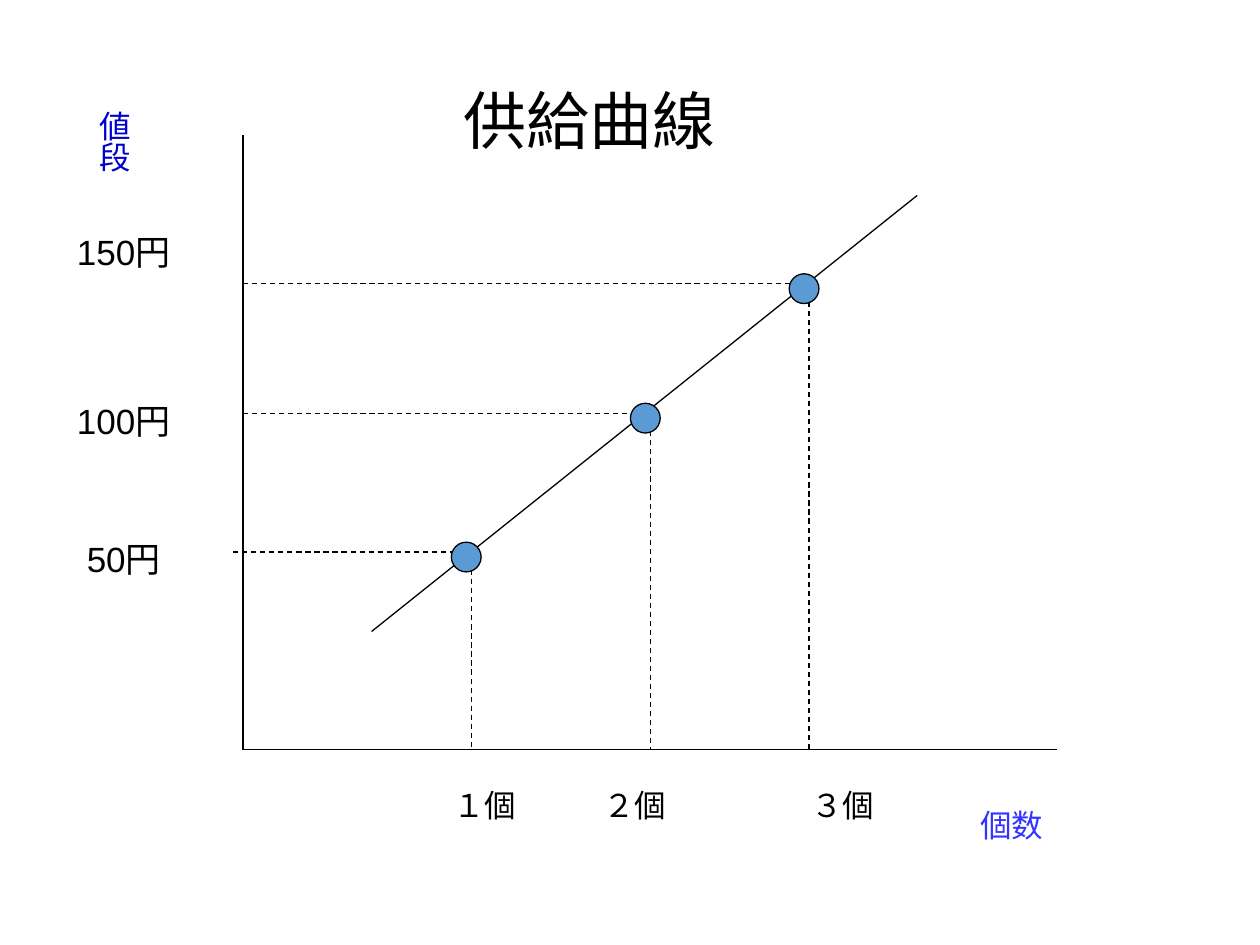
from typing import NamedTuple

from pptx import Presentation
from pptx.dml.color import RGBColor
from pptx.enum import dml, shapes, text
from pptx.oxml.ns import qn
from pptx.util import Cm, Pt

BLACK = RGBColor(0x00, 0x00, 0x00)
NAVY = RGBColor(0x00, 0x00, 0xCC)
BLUE = RGBColor(0x33, 0x33, 0xFF)
SKY = RGBColor(0x5B, 0x9B, 0xD5)

LEFT, RIGHT, TOP, BASE = 4.9, 21.31, 2.72, 15.11
DOT = 0.6
SHIFT = 0.1  # dots sit slightly left of and below the guide corners


class Label(NamedTuple):
    words: str
    left: float
    top: float
    width: float


class Point(NamedTuple):
    x: float
    y: float
    start: float
    price: Label
    count: Label


POINTS = [
    Point(9.5, 11.13, 4.7, Label("50円", 1.5, 10.72, 3.4),
          Label("１個", 8.89, 15.72, 2.59)),
    Point(13.11, 8.33, LEFT, Label("100円", 1.3, 7.92, 3),
          Label("２個", 11.91, 15.72, 3)),
    Point(16.31, 5.72, LEFT, Label("150円", 1.3, 4.52, 3),
          Label("３個", 16.1, 15.72, 2.59)),
]


def write(box, words: str, size: int = 18, color: RGBColor = BLACK,
          upright: bool = False) -> None:
    frame = box.text_frame
    frame.text = words
    frame.word_wrap = True
    frame.auto_size = text.MSO_AUTO_SIZE.NONE
    frame.vertical_anchor = text.MSO_ANCHOR.TOP
    if upright:
        frame._txBody.bodyPr.set("vert", "eaVert")
    para = frame.paragraphs[0]
    para.alignment = text.PP_ALIGN.LEFT
    para.space_before = Pt(0)
    font = para.runs[0].font
    font.name, font.size = "Arial", Pt(size)
    font.color.rgb = color


def add_label(slide, label: Label, height: float = 1.02, **style) -> None:
    box = slide.shapes.add_textbox(
        Cm(label.left), Cm(label.top), Cm(label.width), Cm(height))
    write(box, label.words, **style)


def add_line(slide, x1: float, y1: float, x2: float, y2: float,
             dash: bool = False) -> None:
    line = slide.shapes.add_connector(
        shapes.MSO_CONNECTOR.STRAIGHT, Cm(x1), Cm(y1), Cm(x2), Cm(y2))
    line.line.color.rgb = BLACK
    line.line.width = Pt(0.75)
    if dash:
        line.line.dash_style = dml.MSO_LINE.DASH
    props = line._element.spPr
    props.append(props.makeelement(qn("a:effectLst"), {}))


def add_dot(slide, x: float, y: float) -> None:
    dot = slide.shapes.add_shape(
        shapes.MSO_SHAPE.OVAL, Cm(x - DOT / 2), Cm(y - DOT / 2),
        Cm(DOT), Cm(DOT))
    dot.shadow.inherit = False
    dot.fill.solid()
    dot.fill.fore_color.rgb = SKY
    dot.line.color.rgb = BLACK
    dot.line.width = Pt(0.75)


def main() -> None:
    deck = Presentation()
    deck.slide_width, deck.slide_height = Cm(25.4), Cm(19.05)
    slide = deck.slides.add_slide(deck.slide_layouts[5])

    title = slide.shapes.title
    title.left, title.top = Cm(9.09), Cm(1.52)
    title.width, title.height = Cm(6.6), Cm(1.78)
    write(title, "供給曲線", size=36)

    add_line(slide, LEFT, TOP, LEFT, BASE)
    add_line(slide, LEFT, BASE, RIGHT, BASE)
    add_label(slide, Label("個数", 19.51, 16.13, 4.39), color=BLUE)
    add_label(slide, Label("値段", 1.5, 1.98, 1.3), height=4.39,
              color=NAVY, upright=True)

    add_line(slide, 7.49, 12.73, 18.49, 3.94)
    for point in POINTS:
        add_line(slide, point.start, point.y, point.x, point.y, dash=True)
        add_line(slide, point.x, point.y, point.x, BASE, dash=True)
        add_label(slide, point.price, height=1.09, size=20)
        add_label(slide, point.count)
        add_dot(slide, point.x - SHIFT, point.y + SHIFT)

    deck.save("out.pptx")


if __name__ == "__main__":
    main()
